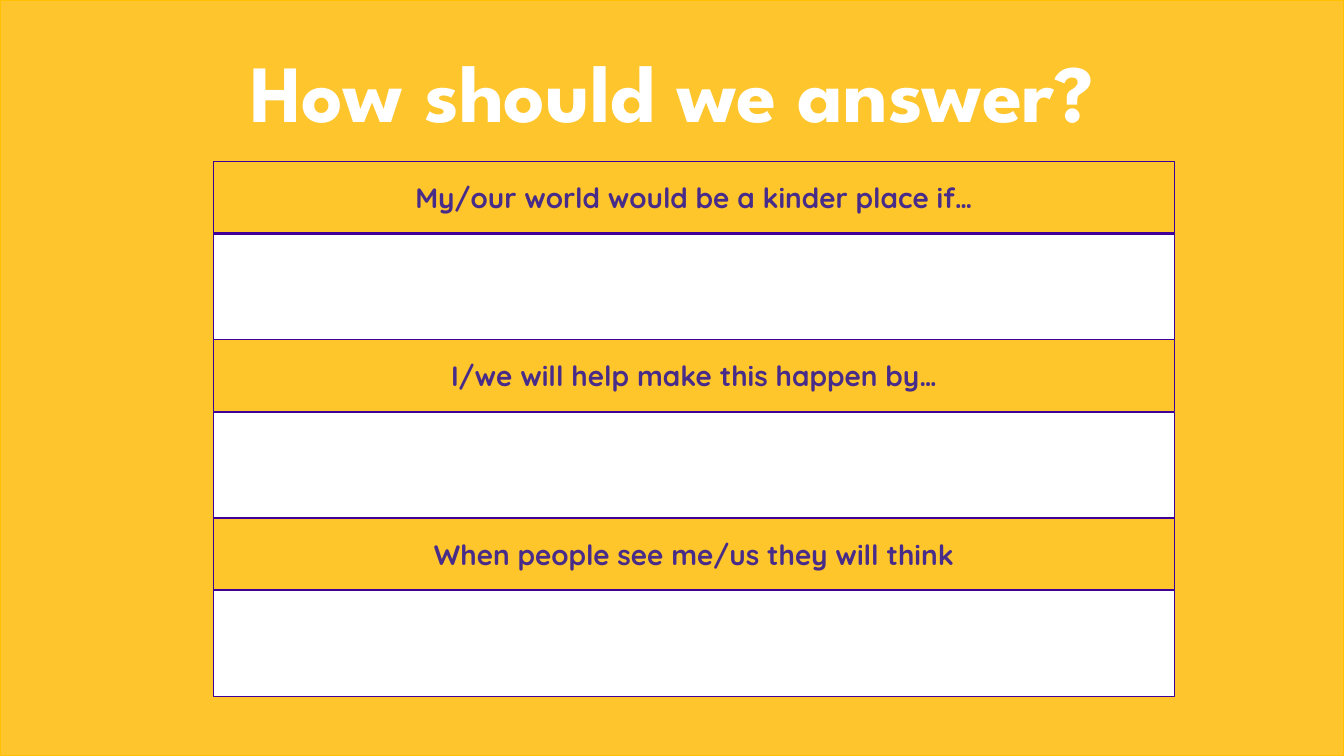
from pptx import Presentation
from pptx.dml.color import RGBColor
from pptx.enum.shapes import MSO_SHAPE
from pptx.enum.text import MSO_ANCHOR, MSO_AUTO_SIZE, PP_ALIGN
from pptx.util import Inches, Pt

RECT = MSO_SHAPE.RECTANGLE
MIDDLE = MSO_ANCHOR.MIDDLE
GROW = MSO_AUTO_SIZE.SHAPE_TO_FIT_TEXT
CENTER = PP_ALIGN.CENTER

WHITE = RGBColor(0xFF, 0xFF, 0xFF)
YELLOW = RGBColor(0xFE, 0xC5, 0x2C)
AMBER = RGBColor(0xFF, 0xC0, 0x00)
GOLD = RGBColor(0xFF, 0xC6, 0x2B)
VIOLET = RGBColor(0x3E, 0x00, 0x99)
PURPLE = RGBColor(0x48, 0x2C, 0x89)

COLS = ROWS = 100
LEFT, WIDTH = 15.9, 71.49
TOP, STEP = 21.33, 23.6
HEAD, BODY = 9.5, 14
BODY_DROP = 9.6

PROMPTS = (
    "My/our world would be a kinder place if…",
    "I/we will help make this happen by…",
    "When people see me/us they will think",
)


def write(frame, text, font="Quicksand", size=20, color=PURPLE, bold=True):
    frame.word_wrap = True
    para = frame.paragraphs[0]
    para.alignment = CENTER
    run = para.add_run()
    run.text = text
    run.font.name = font
    run.font.size = Pt(size)
    run.font.color.rgb = color
    run.font.bold = bold


class Board:
    def __init__(self, deck):
        self.slide = deck.slides.add_slide(deck.slide_layouts[6])
        self.col = deck.slide_width / COLS
        self.row = deck.slide_height / ROWS

    def area(self, x, y, w, h):
        return (round(x * self.col), round(y * self.row),
                round(w * self.col), round(h * self.row))

    def box(self, x, y, w, h, fill, line=VIOLET):
        shape = self.slide.shapes.add_shape(RECT, *self.area(x, y, w, h))
        shape.shadow.inherit = False
        shape.fill.solid()
        shape.fill.fore_color.rgb = fill
        shape.line.color.rgb = line
        shape.line.width = Pt(1)
        return shape

    def label(self, x, y, w, h, text, fill):
        frame = self.box(x, y, w, h, fill).text_frame
        frame.vertical_anchor = MIDDLE
        write(frame, text)

    def title(self, x, y, w, h, text):
        shape = self.slide.shapes.add_textbox(*self.area(x, y, w, h))
        write(shape.text_frame, text, font="League Spartan", size=58, color=WHITE)
        shape.text_frame.auto_size = GROW


def main():
    deck = Presentation()
    deck.slide_width = Inches(13.33)
    deck.slide_height = Inches(7.5)
    board = Board(deck)
    board.box(0, 0, COLS, ROWS, YELLOW, AMBER)
    for i, prompt in enumerate(PROMPTS):
        y = TOP + i * STEP
        board.label(LEFT, y, WIDTH, HEAD, prompt, GOLD)
        board.box(LEFT, y + BODY_DROP, WIDTH, BODY, WHITE)
    board.title(0, 4.8, COLS, 14.4, "How should we answer?")
    deck.save("out.pptx")


if __name__ == "__main__":
    main()
